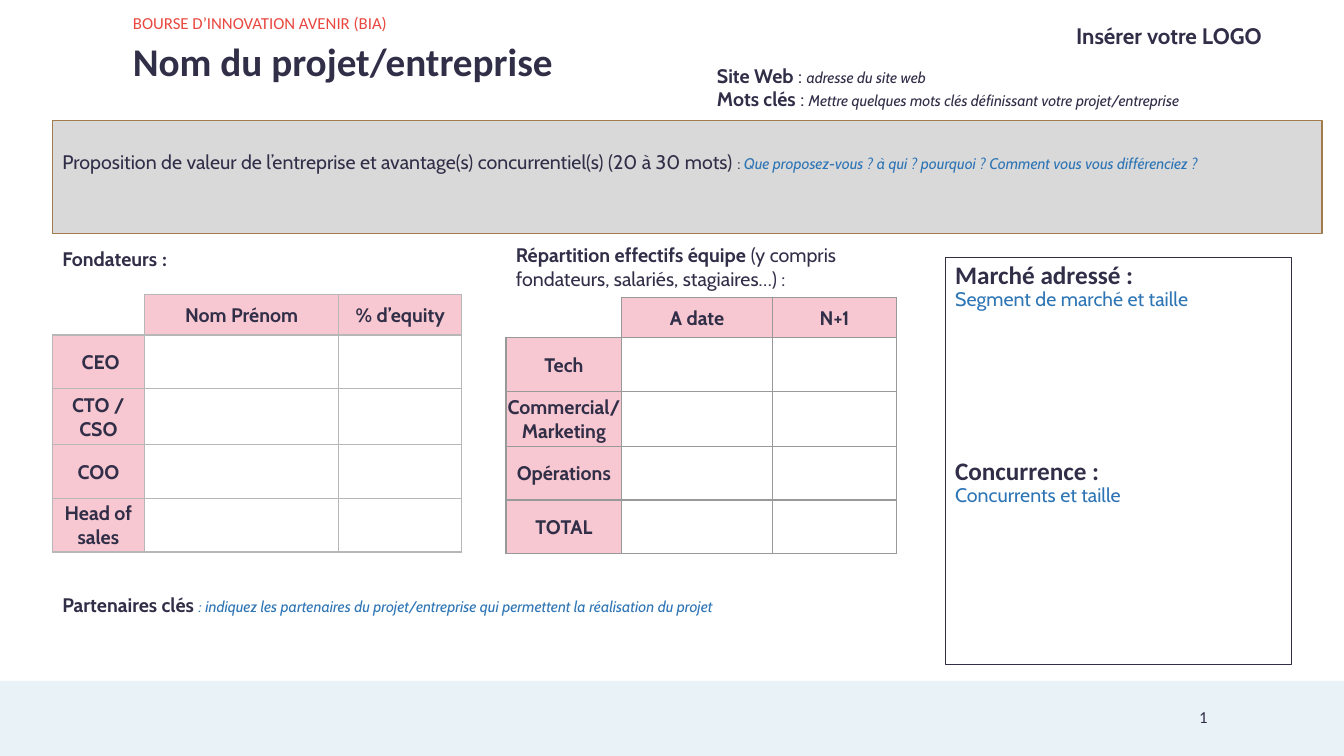
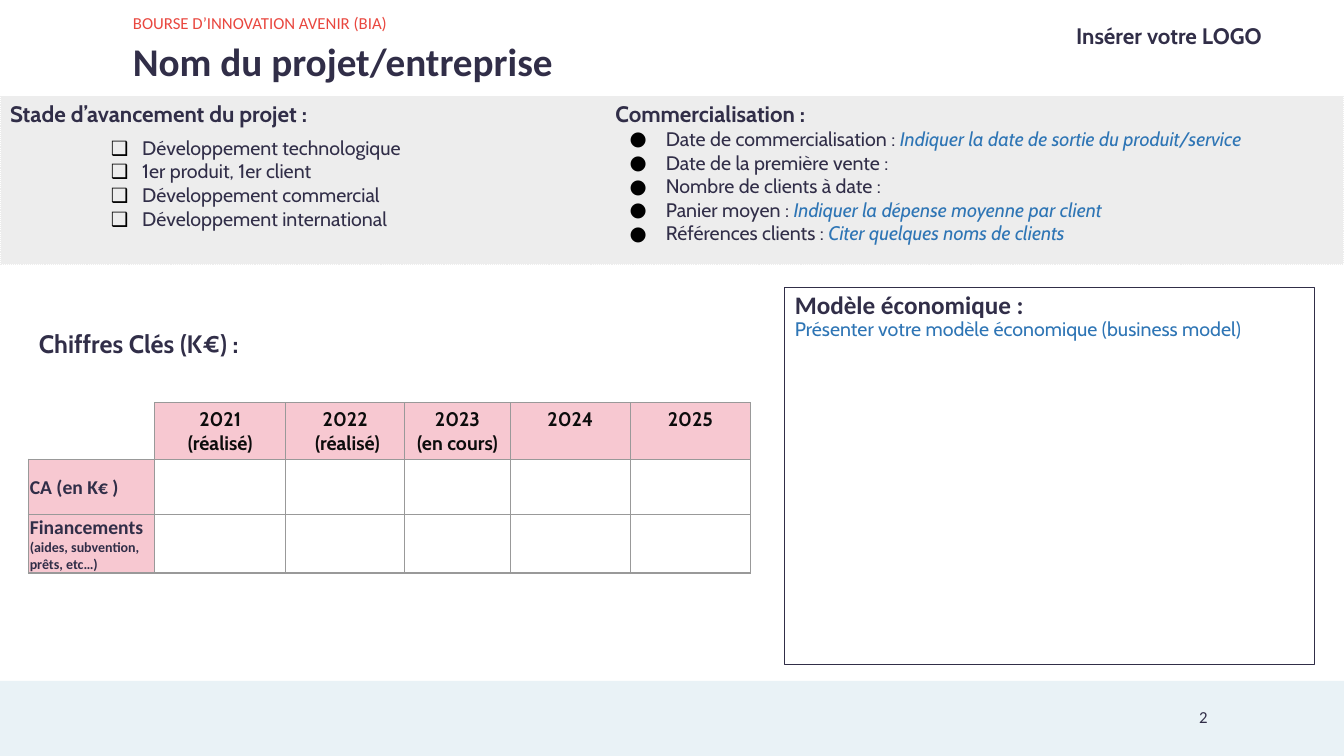
from dataclasses import dataclass

from lxml import etree
from pptx import Presentation
from pptx.dml.color import RGBColor
from pptx.enum.shapes import MSO_SHAPE
from pptx.enum.text import MSO_ANCHOR, PP_ALIGN
from pptx.oxml import parse_xml
from pptx.oxml.ns import nsdecls, qn
from pptx.util import Cm, Pt

RECT = MSO_SHAPE.RECTANGLE
TOP, MIDDLE = MSO_ANCHOR.TOP, MSO_ANCHOR.MIDDLE
LEFT, CENTER = PP_ALIGN.LEFT, PP_ALIGN.CENTER


@dataclass(frozen=True)
class Theme:
    ink: str = "312E48"
    black: str = "0C0C0C"
    white: str = "FFFFFF"
    red: str = "E9473F"
    blue: str = "2E75B5"
    pink: str = "F7C8D1"
    foot: str = "E9F2F6"
    gray: str = "D9D9D9"
    pale: str = "EDEDED"
    gold: str = "A27C4C"
    soft: str = "B7B7B7"
    rule: str = "999999"
    body: str = "Cabin"
    head: str = "Calibri"
    title: int = 28
    large: int = 18
    mid: int = 16
    text: int = 14
    small: int = 12
    hint: int = 11
    note: int = 10


T = Theme()


def write(frame, *runs, size=T.text, bold=False, italic=False, color=T.ink,
          face=T.body, align=LEFT, lead=1.0, before=0, indent=0, hang=0, mark=None):
    """Add one paragraph; a run is a text or a (text, format) pair."""
    para = frame.paragraphs[0]
    if para.runs:
        para = frame.add_paragraph()
    props = para._p.get_or_add_pPr()
    props.set("marL", str(Cm(indent)))
    props.set("indent", str(-Cm(hang)))
    if mark:
        tint = etree.SubElement(props, qn("a:buClr"))
        etree.SubElement(tint, qn("a:srgbClr"), val="000000")
        etree.SubElement(props, qn("a:buFont"), typeface=face)
        etree.SubElement(props, qn("a:buChar"), char=mark)
    para.alignment = align
    para.line_spacing = lead
    para.space_before = Pt(before)
    base = dict(size=size, bold=bold, italic=italic, color=color, face=face)
    for item in runs:
        text, own = (item, {}) if isinstance(item, str) else item
        look = base | own
        run = para.add_run()
        run.text = text
        run.font.size = Pt(look["size"])
        run.font.bold = look["bold"]
        run.font.italic = look["italic"]
        run.font.name = look["face"]
        run.font.color.rgb = RGBColor.from_string(look["color"])


def box(slide, x, y, w, h, fill=None, line=None, weight=0.75, top=0.13):
    """Add a text box, or a rectangle if it has a fill or line; return its frame."""
    place = Cm(x), Cm(y), Cm(w), Cm(h)
    if fill or line:
        shape = slide.shapes.add_shape(RECT, *place)
        shape.shadow.inherit = False
        if fill:
            shape.fill.solid()
            shape.fill.fore_color.rgb = RGBColor.from_string(fill)
        else:
            shape.fill.background()
        if line:
            shape.line.color.rgb = RGBColor.from_string(line)
            shape.line.width = Pt(weight)
        else:
            shape.line.fill.background()
    else:
        shape = slide.shapes.add_textbox(*place)
    frame = shape.text_frame
    frame.word_wrap = True
    frame.vertical_anchor = TOP
    frame.margin_top = Cm(top)
    return frame


prs = Presentation()
prs.slide_width, prs.slide_height = Cm(33.87), Cm(19.05)
one, two = [prs.slides.add_slide(prs.slide_layouts[6]) for _ in range(2)]

# Shared header and footer
for num, slide in enumerate((one, two), 1):
    box(slide, 0, 17.16, 33.87, 1.89, fill=T.foot)
    write(box(slide, 29.97, 17.69, 1.17, 0.46), str(num), size=T.small, face=T.head)
    write(box(slide, 2.95, 0.94, 18.39, 1.47), "Nom du projet/entreprise",
          size=T.title, bold=True, face=T.head, lead=0.9, indent=0.15)
    write(box(slide, 2.95, 0.25, 14.6, 0.71), "BOURSE D’INNOVATION AVENIR (BIA)",
          size=T.small, color=T.red, face=T.head, lead=0.9, indent=0.15)
    write(box(slide, 26.87, 0.43, 5.82, 0.94), "Insérer votre LOGO",
          size=T.mid, bold=True)

strong = dict(bold=True)
plain = dict(size=T.hint, italic=True)
hint = dict(color=T.blue, italic=True)
tip = hint | plain

# Tables: slide, left, top, columns, rows, border, dash, top labels, side labels, formats
mid = dict(align=CENTER)
years = ["2021\n(réalisé)", "2022\n (réalisé)", "2023\n(en cours)", "2024", "2025"]
grids = []
for slide, x, y, cols, rows, edge, dash, heads, sides, upper, lower in (
    (one, 1.32, 7.42, [2.32, 4.9, 3.1], [1.02, 1.35, 1.42, 1.35, 1.35], T.soft, "solid",
     ["Nom Prénom", "% d’equity"], [" CEO", "CTO / CSO", "COO", "Head of sales"], mid, mid),
    (one, 12.75, 7.49, [2.92, 3.8, 3.12], [1.02, 1.35, 1.39, 1.35, 1.35], T.rule, "solid",
     ["A date", "N+1"], ["Tech", "Commercial/Marketing", "Opérations", "TOTAL"], mid, mid),
    (two, 0, 2.41, [33.87], [4.27], T.white, "dot", [], [], {}, {}),
    (two, 0.72, 10.15, [3.18, 3.3, 3, 2.66, 3.03, 3.02], [1.42, 1.4, 1.45], T.rule, "solid",
     years, ["CA (en K€ )", "Financements"], mid | dict(color=T.black), dict(face=T.head)),
):
    table = slide.shapes.add_table(len(rows), len(cols), Cm(x), Cm(y),
                                   Cm(sum(cols)), Cm(sum(rows))).table
    grids.append(table)
    table.first_row = table.horz_banding = False
    for col, width in zip(table.columns, cols):
        col.width = Cm(width)
    for row, height in zip(table.rows, rows):
        row.height = Cm(height)
    for r in range(len(rows)):
        for c in range(len(cols)):
            cell = table.cell(r, c)
            props = cell._tc.get_or_add_tcPr()
            for side in "LRTB" if r or c or not heads else "RB":
                props.append(parse_xml(
                    f'<a:ln{side} {nsdecls("a")} w="{Pt(1)}"><a:solidFill>'
                    f'<a:srgbClr val="{edge}"/></a:solidFill>'
                    f'<a:prstDash val="{dash}"/></a:ln{side}>'))
            if bool(r) == bool(c):
                cell.fill.background()
                continue
            cell.fill.solid()
            cell.fill.fore_color.rgb = RGBColor.from_string(T.pink)
            cell.margin_left = cell.margin_right = cell.margin_top = Cm(0.03)
            cell.margin_bottom = 0
            cell.vertical_anchor = MIDDLE
            if heads is years and c:
                cell.vertical_anchor = TOP
                cell.margin_top = Cm(0.12)
            label, look = (heads[c - 1], upper) if c else (sides[r - 1], lower)
            for line in label.split("\n"):
                write(cell.text_frame, line, bold=True, **look)

band, sums = grids[2:]
write(sums.cell(2, 0).text_frame, "(aides, subvention, prêts, etc…)",
      size=T.note, bold=True, face=T.head)

# Slide 1: project card
site = box(one, 17.32, 1.47, 16.4, 1.45)
for label, value in (
    ("Site Web ", "adresse du site web"),
    ("Mots clés ", "Mettre quelques mots clés définissant votre projet/entreprise"),
):
    write(site, (label, strong), ": ", (value, plain), indent=0.5)

pitch = box(one, 1.32, 3.04, 32, 2.85, fill=T.gray, line=T.gold, weight=1, top=0.75)
write(pitch,
      "Proposition de valeur de l’entreprise et avantage(s) concurrentiel(s) (20 à 30 mots) ",
      (": ", dict(size=T.hint)),
      ("Que proposez-vous ? à qui ? pourquoi ? Comment vous vous différenciez ?", tip))

write(box(one, 1.32, 6.1, 3.48, 0.86), "Fondateurs ", (":", dict(face=T.head)), bold=True)
write(box(one, 12.75, 5.88, 10.82, 1.83, top=0.25),
      ("Répartition effectifs équipe ", strong),
      "(y compris fondateurs, salariés, stagiaires…) :")
write(box(one, 1.32, 14.81, 18.85, 0.86), ("Partenaires clés ", strong),
      (": indiquez les partenaires du projet/entreprise qui permettent "
       "la réalisation du projet", tip))

# Slide 2: progress and sales
cell = band.cell(0, 0)
cell.fill.solid()
cell.fill.fore_color.rgb = RGBColor.from_string(T.pale)
stage = cell.text_frame
write(stage, "Stade d’avancement du projet :", size=T.mid, bold=True)
for pos, step in enumerate(("Développement technologique", "1er produit, 1er client",
                            "Développement commercial", "Développement international")):
    write(stage, step, before=0 if pos else 6, indent=3.33, hang=0.79, mark="❑")

sales = box(two, 15.26, 2.4, 18.5, 4.2)
write(sales, "Commercialisation :", size=T.mid, bold=True)
for runs in (
    ("Date de commercialisation : ",
     ("Indiquer la date de sortie du produit/service", hint)),
    ("Date de la première vente :",),
    ("Nombre de clients à date :",),
    ("Panier moyen : ", ("Indiquer la dépense moyenne par client", hint)),
    ("Références clients : ", ("Citer quelques noms de clients", hint)),
):
    write(sales, *runs, indent=1.27, hang=0.91, mark="●")

write(box(two, 0.73, 8.15, 6.27, 1.02), "Chiffres Clés (K€) :", size=T.large, bold=True)

# Framed panels
market = box(one, 23.82, 6.48, 8.73, 10.26, line=T.ink)
model = box(two, 19.78, 7.24, 13.36, 9.5, line=T.ink)
for frame, head, text, gap in (
    (market, "Marché adressé :", "Segment de marché et taille", 0),
    (market, "Concurrence :", "Concurrents et taille", 105.5),
    (model, "Modèle économique :", "Présenter votre modèle économique (business model)", 0),
):
    write(frame, head, size=T.large, bold=True, face=T.head, lead=0.9, before=gap)
    write(frame, text, color=T.blue, lead=0.9)

prs.save("out.pptx")
